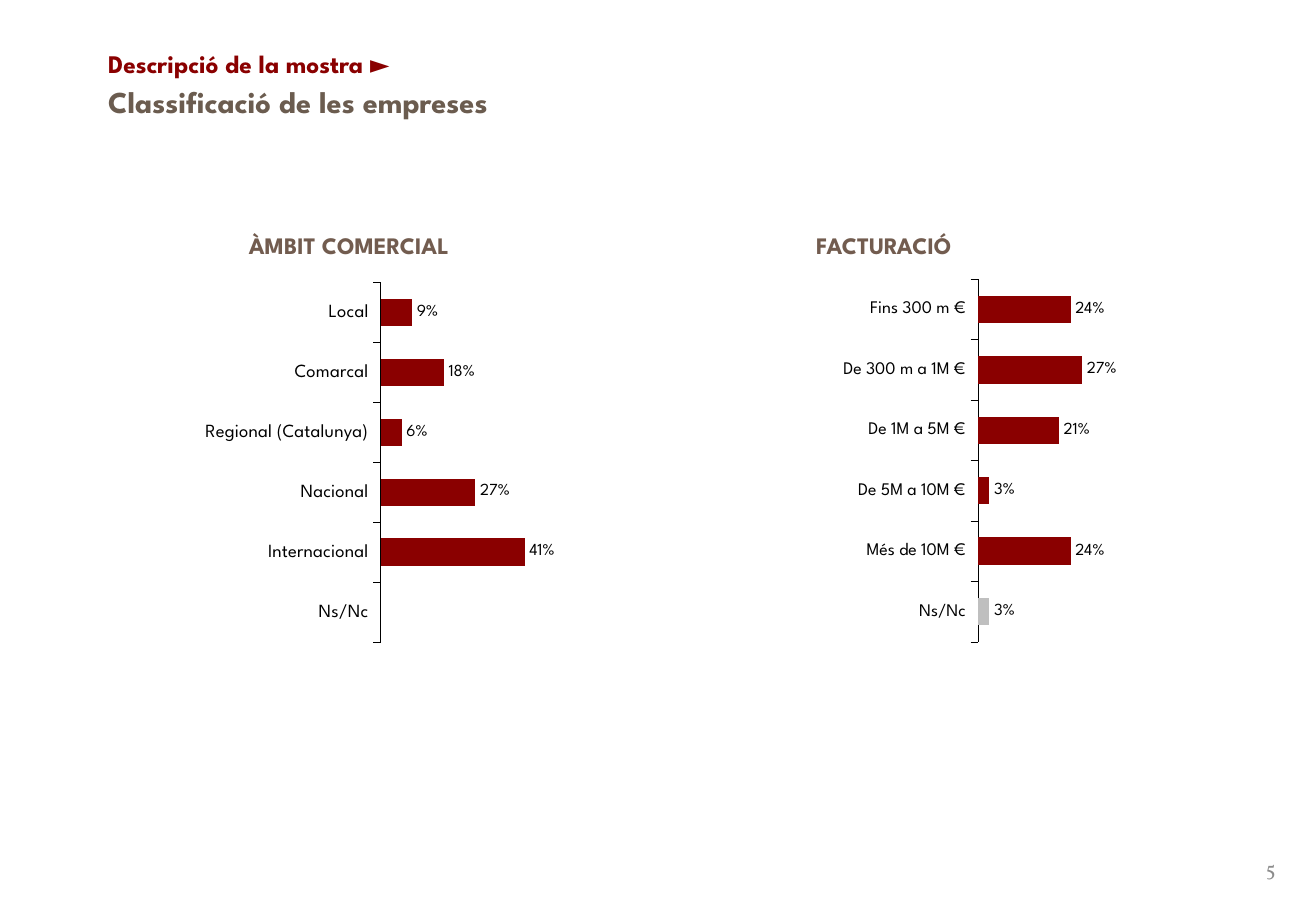
"""Build the slide on the classification of the companies in the sample."""
import dataclasses
from typing import Optional

import lxml.etree
import pptx
import pptx.chart.data
import pptx.dml.color
import pptx.enum.chart
import pptx.enum.text
import pptx.oxml.ns
import pptx.util

Pt = pptx.util.Pt
RGBColor = pptx.dml.color.RGBColor
Anchor = pptx.enum.text.MSO_ANCHOR
Align = pptx.enum.text.PP_ALIGN
AutoSize = pptx.enum.text.MSO_AUTO_SIZE

DARK_RED = RGBColor(0x8A, 0x00, 0x00)
BROWN = RGBColor(0x6B, 0x5C, 0x4F)
HEADING_BROWN = RGBColor(0x72, 0x5C, 0x4F)
BLACK = RGBColor(0x00, 0x00, 0x00)
LIGHT_GREY = RGBColor(0xBF, 0xBF, 0xBF)
NUMBER_GREY = RGBColor(0x8C, 0x8C, 0x8C)
SANS = "League Spartan"
SERIF = "Vollkorn"


@dataclasses.dataclass(frozen=True)
class Frame:
    left: float
    top: float
    width: float
    height: float

    def lengths(self) -> tuple:
        return tuple(Pt(value) for value in dataclasses.astuple(self))


@dataclasses.dataclass(frozen=True)
class Label:
    text: str
    frame: Frame
    size: float
    color: RGBColor
    font: str = SANS
    bold: bool = True
    anchor: Anchor = Anchor.TOP
    align: Align = Align.LEFT
    fit: AutoSize = AutoSize.NONE


@dataclasses.dataclass(frozen=True)
class Plot:
    x: float
    y: float
    w: float
    h: float


@dataclasses.dataclass(frozen=True)
class BarPanel:
    heading: Label
    frame: Frame
    plot: Plot
    axis_size: float
    shares: dict[str, Optional[float]]


TITLE = Label("Descripció de la mostra ►", Frame(56.9, 20.2, 663, 34.6), 15,
              DARK_RED, anchor=Anchor.MIDDLE)
SUBTITLE = Label("Classificació de les empreses", Frame(56.9, 45.4, 605.5, 33.1),
                 18, BROWN)
PAGE_NUMBER = Label("5", Frame(587.5, 500.4, 175.7, 28.8), 12, NUMBER_GREY, SERIF,
                    False, Anchor.MIDDLE, Align.RIGHT)


def panel_heading(text: str, left: float) -> Label:
    return Label(text, Frame(left, 133.2, 260.6, 24.5), 14, HEADING_BROWN,
                 fit=AutoSize.SHAPE_TO_FIT_TEXT)


PANELS = [
    BarPanel(
        panel_heading("ÀMBIT COMERCIAL", 140.4),
        Frame(95.8, 155.5, 344.2, 234.7), Plot(0.377, 0.051, 0.605, 0.908), 11,
        {"Local": 0.09, "Comarcal": 0.18, "Regional (Catalunya)": 0.06,
         "Nacional": 0.27, "Internacional": 0.41, "Ns/Nc": None}),
    BarPanel(
        panel_heading("FACTURACIÓ", 476.6),
        Frame(464.4, 153.4, 385.2, 236.9), Plot(0.299, 0.051, 0.595, 0.908), 10.5,
        {"Fins 300 m €": 0.24, "De 300 m a 1M €": 0.27, "De 1M a 5M €": 0.21,
         "De 5M a 10M €": 0.03, "Més de 10M €": 0.24, "Ns/Nc": 0.03}),
]


def style_font(font, name: str, size: float, color: RGBColor, bold: bool) -> None:
    font.name = name
    font.size = Pt(size)
    font.bold = bold
    font.color.rgb = color


def write_label(box, label: Label) -> None:
    box.left, box.top, box.width, box.height = label.frame.lengths()
    text_frame = box.text_frame
    text_frame.word_wrap = True
    text_frame.auto_size = label.fit
    text_frame.vertical_anchor = label.anchor
    para = text_frame.paragraphs[0]
    para.alignment = label.align
    para.space_before = Pt(0)
    span = para.add_run()
    span.text = label.text
    style_font(span.font, label.font, label.size, label.color, label.bold)


def add_label(page, label: Label) -> None:
    write_label(page.shapes.add_textbox(*label.frame.lengths()), label)


def remove_bullet(para) -> None:
    properties = para._p.get_or_add_pPr()
    properties.set("marL", "0")
    properties.set("indent", "0")
    lxml.etree.SubElement(properties, pptx.oxml.ns.qn("a:buNone"))


def place_plot(chart, plot: Plot) -> None:
    qn = pptx.oxml.ns.qn
    area = chart.element.find(f".//{qn('c:plotArea')}")
    for old in area.findall(qn("c:layout")):
        area.remove(old)
    layout = lxml.etree.Element(qn("c:layout"))
    manual = lxml.etree.SubElement(layout, qn("c:manualLayout"))
    settings = {"layoutTarget": "inner", "xMode": "edge", "yMode": "edge",
                **dataclasses.asdict(plot)}
    for name, value in settings.items():
        lxml.etree.SubElement(manual, qn(f"c:{name}")).set("val", str(value))
    area.insert(0, layout)


def add_panel(page, panel: BarPanel) -> None:
    add_label(page, panel.heading)
    data = pptx.chart.data.CategoryChartData(number_format="0%")
    data.categories = list(panel.shares)
    data.add_series("Series 1", list(panel.shares.values()))
    chart = page.shapes.add_chart(pptx.enum.chart.XL_CHART_TYPE.BAR_CLUSTERED,
                                  *panel.frame.lengths(), data).chart
    chart.has_title = False
    chart.has_legend = False
    style_font(chart.font, SANS, panel.axis_size, BLACK, False)
    place_plot(chart, panel.plot)

    categories = chart.category_axis
    categories.reverse_order = True
    categories.has_major_gridlines = False
    categories.major_tick_mark = pptx.enum.chart.XL_TICK_MARK.OUTSIDE
    categories.format.line.color.rgb = BLACK
    categories.format.line.width = Pt(0.25)
    style_font(categories.tick_labels.font, SANS, panel.axis_size, BLACK, False)

    values = chart.value_axis
    values.minimum_scale = 0
    values.maximum_scale = 1
    values.has_major_gridlines = False
    values.visible = False

    bars = chart.plots[0]
    bars.gap_width = 120
    bars.vary_by_categories = False
    series = bars.series[0]
    series.format.fill.solid()
    series.format.fill.fore_color.rgb = DARK_RED
    no_answer = series.points[len(panel.shares) - 1].format.fill
    no_answer.solid()
    no_answer.fore_color.rgb = LIGHT_GREY

    labels = series.data_labels
    labels.show_value = True
    labels.number_format = "0%"
    labels.number_format_is_linked = False
    labels.position = pptx.enum.chart.XL_LABEL_POSITION.OUTSIDE_END
    style_font(labels.font, SANS, 10, BLACK, False)


def main() -> None:
    deck = pptx.Presentation()
    deck.slide_width, deck.slide_height = Pt(780), Pt(540)
    page = deck.slides.add_slide(deck.slide_layouts[1])
    body = page.placeholders[1]
    write_label(page.shapes.title, TITLE)
    write_label(body, SUBTITLE)
    remove_bullet(body.text_frame.paragraphs[0])
    for panel in PANELS:
        add_panel(page, panel)
    add_label(page, PAGE_NUMBER)
    deck.save("out.pptx")


if __name__ == "__main__":
    main()
